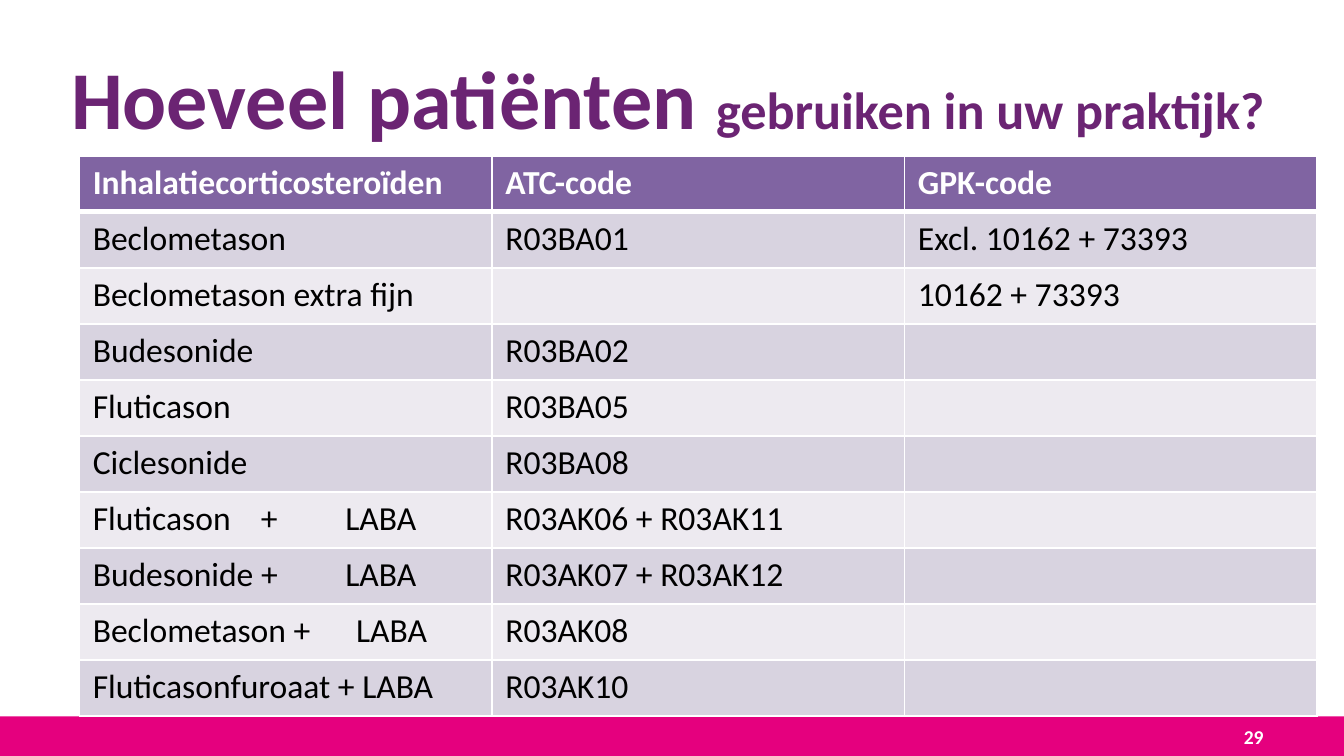
from lxml.etree import SubElement
from pptx import Presentation
from pptx.dml.color import RGBColor
from pptx.enum.shapes import MSO_SHAPE as Shape
from pptx.enum.text import MSO_ANCHOR as Anchor, PP_ALIGN as Align
from pptx.oxml.ns import qn
from pptx.util import Inches, Pt

WHITE, BLACK = "FFFFFF", "000000"
PINK, PLUM, HEADER = "E5007E", "6B2473", "8064A2"
BANDS = ("D8D3E0", "EDEAF0")

ROWS = [
    ("Inhalatiecorticosteroïden", "ATC-code", "GPK-code"),
    ("Beclometason", "R03BA01", "Excl. 10162 + 73393"),
    ("Beclometason extra fijn", "", "10162 + 73393"),
    ("Budesonide", "R03BA02", ""),
    ("Fluticason", "R03BA05", ""),
    ("Ciclesonide", "R03BA08", ""),
    ("Fluticason\t+\tLABA", "R03AK06 + R03AK11", ""),
    ("Budesonide +\tLABA", "R03AK07 + R03AK12", ""),
    ("Beclometason +\tLABA", "R03AK08", ""),
    ("Fluticasonfuroaat + LABA", "R03AK10", ""),
]
TAB_STOPS = {6: (1.25, 1.88), 7: (1.88,), 8: (1.96,)}


def color(value):
    return RGBColor.from_string(value)


class SlideBuilder:
    font = "Calibri"

    def __init__(self, page):
        self.page = page

    def span(self, para, text, size, ink, bold=False):
        span = para.add_run()
        span.text = text
        formats = {"name": self.font, "size": Pt(size), "bold": bold}
        for name, value in formats.items():
            setattr(span.font, name, value)
        span.font.color.rgb = color(ink)

    def bar(self, place, fill):
        bar = self.page.shapes.add_shape(Shape.RECTANGLE, *map(Inches, place))
        bar.shadow.inherit = False
        bar.fill.solid()
        bar.fill.fore_color.rgb = color(fill)
        bar.line.fill.background()

    def text(self, place, spans, align=Align.LEFT, anchor=Anchor.TOP):
        box = self.page.shapes.add_textbox(*map(Inches, place))
        frame = box.text_frame
        formats = {"word_wrap": True, "vertical_anchor": anchor}
        for name, value in formats.items():
            setattr(frame, name, value)
        para = frame.paragraphs[0]
        para.alignment = align
        for span in spans:
            self.span(para, *span)

    def tabs(self, para, stops):
        tab_list = SubElement(para._p.get_or_add_pPr(), qn("a:tabLst"))
        for stop in stops:
            SubElement(tab_list, qn("a:tab"), pos=str(Inches(stop)), algn="l")

    def border(self, cell, side, width):
        line = SubElement(cell._tc.get_or_add_tcPr(), qn(f"a:ln{side}"), w=str(Pt(width)))
        fill = SubElement(line, qn("a:solidFill"))
        SubElement(fill, qn("a:srgbClr"), val=WHITE)

    def cell(self, cell, text, row):
        header = row == 0
        thick_side = {0: "B", 1: "T"}.get(row)
        for side in "LRTB":
            self.border(cell, side, 3 if side == thick_side else 1)
        cell.fill.solid()
        cell.fill.fore_color.rgb = color(HEADER if header else BANDS[(row - 1) % 2])
        para = cell.text_frame.paragraphs[0]
        if "\t" in text:
            self.tabs(para, TAB_STOPS[row])
        if text:
            self.span(para, text, 18, WHITE if header else BLACK, header)
        else:
            para.font.size = Pt(18)

    def table(self, place, rows):
        frame = self.page.shapes.add_table(len(rows), len(rows[0]), *map(Inches, place))
        for row, texts in enumerate(rows):
            for column, text in enumerate(texts):
                self.cell(frame.table.cell(row, column), text, row)


def main():
    deck = Presentation()
    deck.slide_width = Inches(10)
    deck.slide_height = deck.slide_width * 9 // 16
    slide = SlideBuilder(deck.slides.add_slide(deck.slide_layouts[6]))
    slide.bar((0, 5.33, 10, 0.3), PINK)
    slide.text((0.43, 0.3, 9.21, 0.79), [
        ("Hoeveel patiënten ", 44, PLUM, True),
        ("gebruiken in uw praktijk?", 28, PLUM, True),
    ])
    slide.text((7.17, 5.33, 2.33, 0.3), [("29", 10.5, WHITE, True)], Align.RIGHT, Anchor.MIDDLE)
    slide.table((0.59, 1.16, 9.21, 4.17), ROWS)
    deck.save("out.pptx")


if __name__ == "__main__":
    main()
